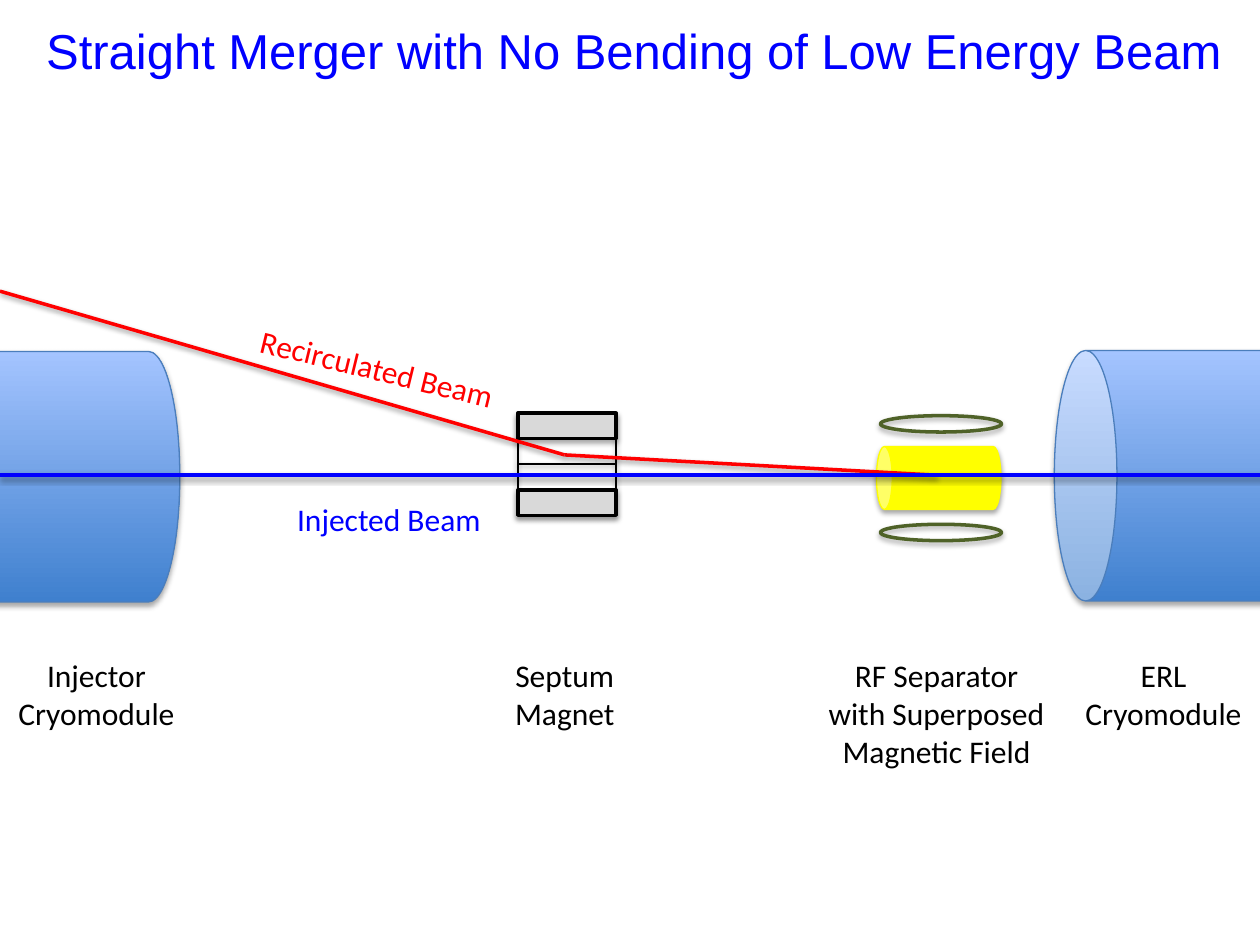
from lxml import etree
from pptx import Presentation
from pptx.dml.color import RGBColor
from pptx.enum.shapes import MSO_CONNECTOR, MSO_SHAPE
from pptx.enum.text import MSO_ANCHOR, MSO_AUTO_SIZE, PP_ALIGN
from pptx.oxml.ns import qn
from pptx.util import Cm, Pt

CAN, ELLIPSE, RECTANGLE = MSO_SHAPE.CAN, MSO_SHAPE.OVAL, MSO_SHAPE.RECTANGLE
STRAIGHT = MSO_CONNECTOR.STRAIGHT
CENTER, LEFT = PP_ALIGN.CENTER, PP_ALIGN.LEFT
MIDDLE = MSO_ANCHOR.MIDDLE
FIT_SHAPE = MSO_AUTO_SIZE.SHAPE_TO_FIT_TEXT
BLACK, RED, BLUE, YELLOW = "000000", "FF0000", "0000FF", "FFFF00"
GREY, GREEN, STEEL = "D9D9D9", "4F6228", "4B7EBC"
GRADIENT = ("3F80CE", "A4C4FF")
rgb = RGBColor.from_string


def add_shadow(item, distance, opacity):
    properties = item._element.spPr
    for old in properties.findall(qn("a:effectLst")):
        properties.remove(old)
    effects = etree.SubElement(properties, qn("a:effectLst"))
    shadow = etree.SubElement(effects, qn("a:outerShdw"), blurRad=str(Pt(3.1)),
                              dist=str(Pt(distance)), dir="5400000", rotWithShape="0")
    color = etree.SubElement(shadow, qn("a:srgbClr"), val=BLACK)
    etree.SubElement(color, qn("a:alpha"), val=str(opacity * 1000))


def write_text(frame, text, size, font_name, color, align):
    para = frame.paragraphs[0]
    para.alignment = align
    span = para.add_run()
    span.text = text
    span.font.color.rgb = rgb(color)
    for name, value in {"size": Pt(size), "name": font_name}.items():
        setattr(span.font, name, value)


deck = Presentation()
deck.slide_width, deck.slide_height = Cm(25.4), Cm(19.05)
page = deck.slides.add_slide(deck.slide_layouts[5])

# Title
title = page.shapes.title
for name, value in {"left": 0.15, "top": 0.23, "width": 25.25, "height": 1.57}.items():
    setattr(title, name, Cm(value))
title.text_frame.vertical_anchor = MIDDLE
write_text(title.text_frame, "Straight Merger with No Bending of Low Energy Beam",
           28, "Arial", BLUE, CENTER)

# Separator, septum magnet and cryomodules; the cans lie on their side
components = [
    (CAN, 18.29, 8.38, 1.27, 2.51, YELLOW, YELLOW, 0.75),
    (ELLIPSE, 17.75, 8.38, 2.44, 0.33, None, GREEN, 2),
    (ELLIPSE, 17.75, 10.57, 2.44, 0.33, None, GREEN, 2),
    (RECTANGLE, 10.44, 8.33, 1.98, 2.03, None, BLACK, 1),
    (RECTANGLE, 10.44, 9.88, 1.98, 0.51, GREY, BLACK, 2),
    (RECTANGLE, 10.44, 8.33, 1.98, 0.51, GREY, BLACK, 2),
    (CAN, 22.45, 5.87, 5.05, 7.44, GRADIENT, STEEL, 0.75),
    (CAN, -2.62, 5.89, 5.05, 7.44, GRADIENT, STEEL, 0.75),
]
for kind, left, top, width, height, fill, outline, weight in components:
    shape = page.shapes.add_shape(kind, Cm(left), Cm(top), Cm(width), Cm(height))
    if kind == CAN:
        shape.rotation = 270
    if fill is None:
        shape.fill.background()
    elif fill == GRADIENT:
        shape.fill.gradient()
        shape.fill.gradient_angle = 90  # counter-clockwise: dark below, light above
        for stop, color in zip(shape.fill.gradient_stops, GRADIENT):
            stop.color.rgb = rgb(color)
        shape._element.spPr.find(qn("a:gradFill")).set("rotWithShape", "0")
    else:
        shape.fill.solid()
        shape.fill.fore_color.rgb = rgb(fill)
    shape.line.color.rgb = rgb(outline)
    shape.line.width = Pt(weight)
    add_shadow(shape, 1.8, 35)

# Septum midline, recirculated beam and injected beam
lines = [
    (10.44, 9.35, 12.42, 9.35, BLACK, 1),
    (11.38, 9.17, 18.9, 9.58, RED, 2),
    (0, 5.87, 11.38, 9.17, RED, 2),
    (0, 9.58, 28.14, 9.58, BLUE, 2),
]
for x1, y1, x2, y2, color, weight in lines:
    line = page.shapes.add_connector(STRAIGHT, Cm(x1), Cm(y1), Cm(x2), Cm(y2))
    line.line.color.rgb = rgb(color)
    line.line.width = Pt(weight)
    add_shadow(line, 1.6, 38)

# Component captions and beam labels
labels = [
    ("Septum Magnet", 9.91, 13.11, 2.95, 1.8, 0, BLACK, CENTER),
    ("RF Separator with Superposed Magnetic Field", 16.43, 13.11, 4.9, 2.57, 0, BLACK, CENTER),
    ("ERL Cryomodule", 21.51, 13.11, 3.89, 1.8, 0, BLACK, CENTER),
    ("Injector Cryomodule", 0, 13.11, 3.89, 1.8, 0, BLACK, CENTER),
    ("Injected Beam", 5.74, 9.96, 4.27, 1.02, 0, BLUE, LEFT),
    ("Recirculated Beam", 4.95, 6.93, 5.38, 1.02, 13.8, RED, LEFT),
]
for text, left, top, width, height, angle, color, align in labels:
    box = page.shapes.add_textbox(Cm(left), Cm(top), Cm(width), Cm(height))
    box.rotation = angle
    box.text_frame.word_wrap = align == CENTER
    box.text_frame.auto_size = FIT_SHAPE
    write_text(box.text_frame, text, 18, "Calibri", color, align)

deck.save("out.pptx")
